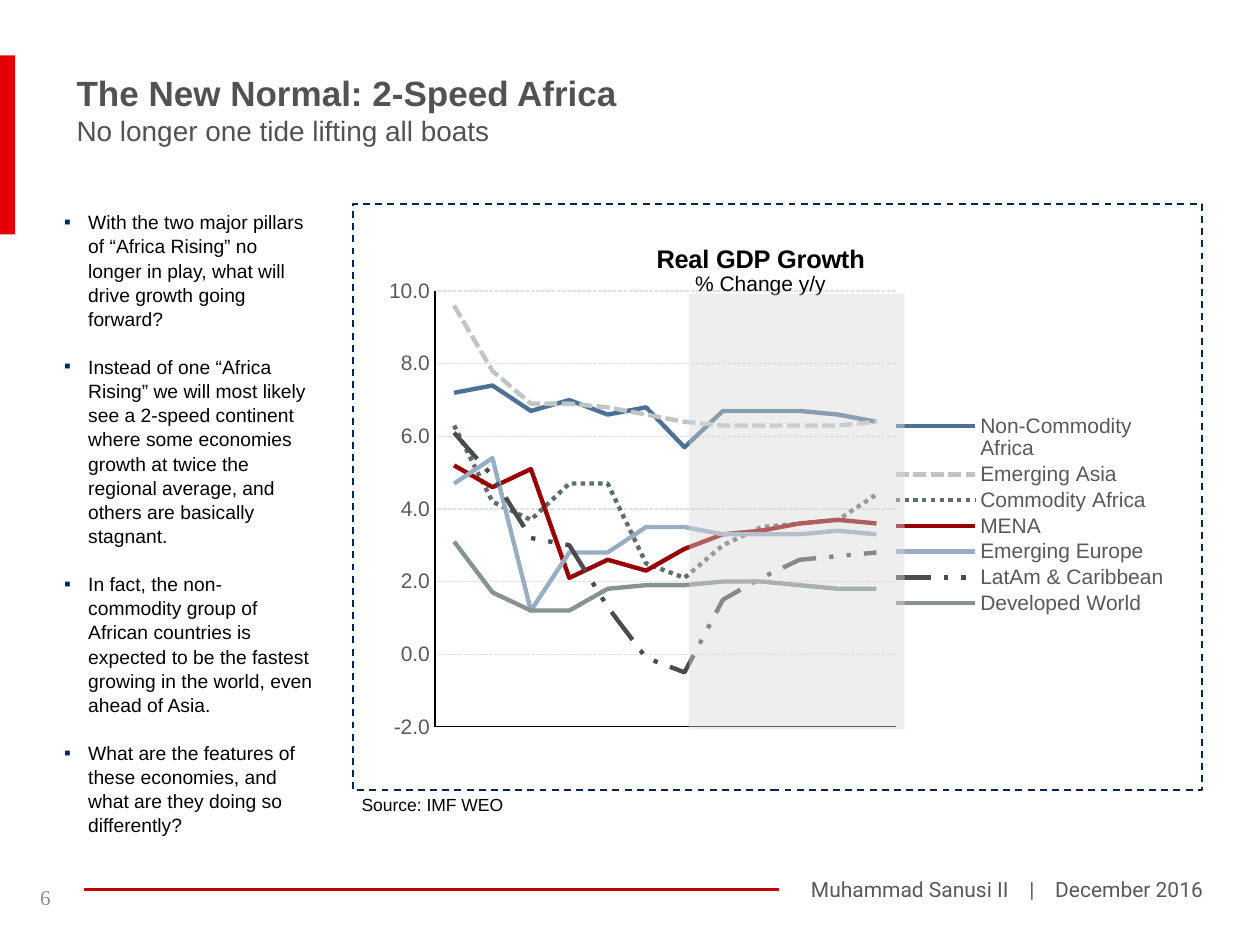
from lxml import etree
from pptx import Presentation, util as u
from pptx.chart.data import CategoryChartData
from pptx.dml.color import RGBColor
from pptx.enum import chart as ch, dml, shapes, text
from pptx.oxml import parse_xml
from pptx.oxml.ns import nsdecls, qn

HEAD = [("The New Normal: 2-Speed Africa", 20, True),
        ("No longer one tide lifting all boats", 16, False)]
POINTS = [
    "With the two major pillars of “Africa Rising” no longer in play, what will drive growth going forward?",
    "Instead of one “Africa Rising” we will most likely see a 2-speed continent where some economies growth at twice the regional average, and others are basically stagnant.",
    "In fact, the non-commodity group of African countries is expected to be the fastest growing in the world, even ahead of Asia.",
    "What are the features of these economies, and what are they doing so differently?",
]
TITLE = [("Real GDP Growth", 14.5, True), ("% Change y/y", 12, False)]
DASH = dml.MSO_LINE
SERIES = [
    ("Non-Commodity Africa", "4D7194", None,
     [7.2, 7.4, 6.7, 7, 6.6, 6.8, 5.7, 6.7, 6.7, 6.7, 6.6, 6.4]),
    ("Emerging Asia", "BEC5C4", DASH.SQUARE_DOT,
     [9.6, 7.8, 6.9, 6.9, 6.8, 6.6, 6.4, 6.3, 6.3, 6.3, 6.3, 6.4]),
    ("Commodity Africa", "5D6F6C", DASH.ROUND_DOT,
     [6.3, 4.2, 3.7, 4.7, 4.7, 2.5, 2.1, 3, 3.5, 3.6, 3.7, 4.4]),
    ("MENA", "960000", None,
     [5.2, 4.6, 5.1, 2.1, 2.6, 2.3, 2.9, 3.3, 3.4, 3.6, 3.7, 3.6]),
    ("Emerging Europe", "99ADC2", None,
     [4.7, 5.4, 1.2, 2.8, 2.8, 3.5, 3.5, 3.3, 3.3, 3.3, 3.4, 3.3]),
    ("LatAm & Caribbean", "4B4B4B", DASH.DASH_DOT_DOT,
     [6.1, 4.9, 3.2, 3, 1.3, -0.1, -0.5, 1.5, 2.1, 2.6, 2.7, 2.8]),
    ("Developed World", "869391", None,
     [3.1, 1.7, 1.2, 1.2, 1.8, 1.9, 1.9, 2, 2, 1.9, 1.8, 1.8]),
]


def tint(hue):
    return RGBColor.from_string(hue)


def style(font, size, hue, bold=False, face="Arial"):
    font.size, font.bold, font.name = u.Pt(size), bold, face
    font.color.rgb = tint(hue)


def stroke(line, hue, width, dash=None):
    line.color.rgb = tint(hue)
    line.width = u.Pt(width)
    if dash:
        line.dash_style = dash


def inch(box):
    return [u.Inches(n) for n in box]


def write(slide, box, rows, hue, face="Arial", pad=(0.1, 0.05, 0.1, 0.05),
          align=text.PP_ALIGN.LEFT, anchor=text.MSO_ANCHOR.TOP):
    frame = slide.shapes.add_textbox(*inch(box)).text_frame
    frame.word_wrap, frame.vertical_anchor = True, anchor
    (frame.margin_left, frame.margin_top,
     frame.margin_right, frame.margin_bottom) = inch(pad)
    frame.text = "\n".join(row[0] for row in rows)
    for para, (_, size, bold) in zip(frame.paragraphs, rows):
        para.alignment = align
        style(para.runs[0].font, size, hue, bold, face)
    return frame


def rect(slide, box, fill=None, alpha=None):
    shape = slide.shapes.add_shape(shapes.MSO_SHAPE.RECTANGLE, *inch(box))
    shape.shadow.inherit = False
    shape.line.fill.background()
    if not fill:
        shape.fill.background()
        return shape
    shape.fill.solid()
    shape.fill.fore_color.rgb = tint(fill)
    if alpha:
        node = shape._element.spPr.find(".//" + qn("a:srgbClr"))
        etree.SubElement(node, qn("a:alpha")).set("val", str(alpha * 1000))
    return shape


def bullet(para):
    props = para._p.get_or_add_pPr()
    props.set("marL", str(u.Inches(0.19)))
    props.set("indent", str(-u.Inches(0.19)))
    hue = etree.SubElement(props, qn("a:buClr"))
    etree.SubElement(hue, qn("a:srgbClr")).set("val", "042556")
    etree.SubElement(props, qn("a:buFont")).set("typeface", "Arial")
    etree.SubElement(props, qn("a:buChar")).set("char", "▪")


def layout(node, after, x, y, w=None, h=None, inner=False):
    for old in node.findall(qn("c:layout")):
        node.remove(old)
    tags = [("layoutTarget", "inner")] if inner else []
    tags += [("xMode", "edge"), ("yMode", "edge")]
    tags += [(k, v) for k, v in zip("xywh", (x, y, w, h)) if v is not None]
    body = "".join(f'<c:{k} val="{v}"/>' for k, v in tags)
    part = parse_xml(f'<c:layout {nsdecls("c")}><c:manualLayout>{body}'
                     '</c:manualLayout></c:layout>')
    if after is None:
        node.insert(0, part)
    else:
        node.find(qn(after)).addnext(part)


def graph(slide, box):
    data = CategoryChartData(number_format="0.0")
    data.categories = [str(n) for n in range(1, 13)]
    for name, _, _, vals in SERIES:
        data.add_series(name, vals)
    chart = slide.shapes.add_chart(ch.XL_CHART_TYPE.LINE, *inch(box), data).chart
    style(chart.font, 10, "000000")

    frame = chart.chart_title.text_frame
    frame.text = "\n".join(row[0] for row in TITLE)
    for para, (_, size, bold) in zip(frame.paragraphs, TITLE):
        style(para.runs[0].font, size, "000000", bold)
    head = chart.chart_title._element
    head.find(qn("c:overlay")).set("val", "1")
    layout(head, "c:tx", 0.37, 0.04)

    plot = chart.plots[0]
    plot.vary_by_categories = False
    for line, (_, hue, dash, _) in zip(plot.series, SERIES):
        line.smooth = False
        line.marker.style = ch.XL_MARKER_STYLE.NONE
        stroke(line.format.line, hue, 2.5, dash)
    area = chart._chartSpace.chart.plotArea
    layout(area, None, 0.11, 0.13, 0.55, 0.76, True)

    cat, val = chart.category_axis, chart.value_axis
    for axis in (cat, val):
        axis.major_tick_mark = axis.minor_tick_mark = ch.XL_TICK_MARK.NONE
        style(axis.tick_labels.font, 12, "595959")
        stroke(axis.format.line, "000000", 0.75)
    cat.tick_label_position = ch.XL_TICK_LABEL_POSITION.NONE
    val.minimum_scale, val.maximum_scale, val.major_unit = -2, 10, 2
    val.crosses = ch.XL_AXIS_CROSSES.MINIMUM
    val.tick_labels.number_format = "0.0"
    val.tick_labels.number_format_is_linked = False
    stroke(val.major_gridlines.format.line, "E0E0E0", 0.75, DASH.SQUARE_DOT)

    chart.has_legend = True
    chart.legend.position = ch.XL_LEGEND_POSITION.LEFT
    chart.legend.include_in_layout = False
    style(chart.legend.font, 12, "595959")
    layout(chart.legend._element, "c:legendPos", 0.66, 0.34, 0.32, 0.36)


def main():
    deck = Presentation()
    deck.slide_width, deck.slide_height = inch((10, 7.5))
    slide = deck.slides.add_slide(deck.slide_layouts[6])
    mid = text.MSO_ANCHOR.MIDDLE

    write(slide, (5.63, 6.91, 4.02, 0.3),
          [("Muhammad Sanusi II    |    December 2016", 12, False)], "595959",
          "Roboto", align=text.PP_ALIGN.RIGHT, anchor=mid)
    rule = slide.shapes.add_connector(shapes.MSO_CONNECTOR.STRAIGHT,
                                      *inch((0.67, 7.06, 6.18, 7.06)))
    stroke(rule.line, "C00000", 1.5)
    etree.SubElement(rule._element.spPr, qn("a:effectLst"))
    rect(slide, (0, 0.44, 0.12, 1.42), "E20000")
    write(slide, (0.51, 0.52, 8.66, 0.71), HEAD, "525252")

    graph(slide, (2.72, 1.72, 6.65, 4.55))
    rect(slide, (5.47, 2.33, 1.71, 3.46), "D9D9D9", 43)

    notes = write(slide, (0.51, 1.66, 1.99, 5.32),
                  [(point, 11, False) for point in POINTS], "000000", pad=(0,) * 4)
    for para in notes.paragraphs:
        para.line_spacing, para.space_after = 1.05, u.Pt(13.3)
        bullet(para)

    frame = rect(slide, (2.8, 1.62, 6.74, 4.65))
    stroke(frame.line, "042556", 1, DASH.DASH)
    write(slide, (2.8, 6.27, 3.62, 0.24), [("Source: IMF WEO", 10, False)],
          "000000", pad=(0.07, 0.03, 0.07, 0.04))
    write(slide, (0.22, 6.95, 0.43, 0.34), [("6", 12, False)], "8C8C8C",
          "Times New Roman", anchor=mid)
    deck.save("out.pptx")


if __name__ == "__main__":
    main()
